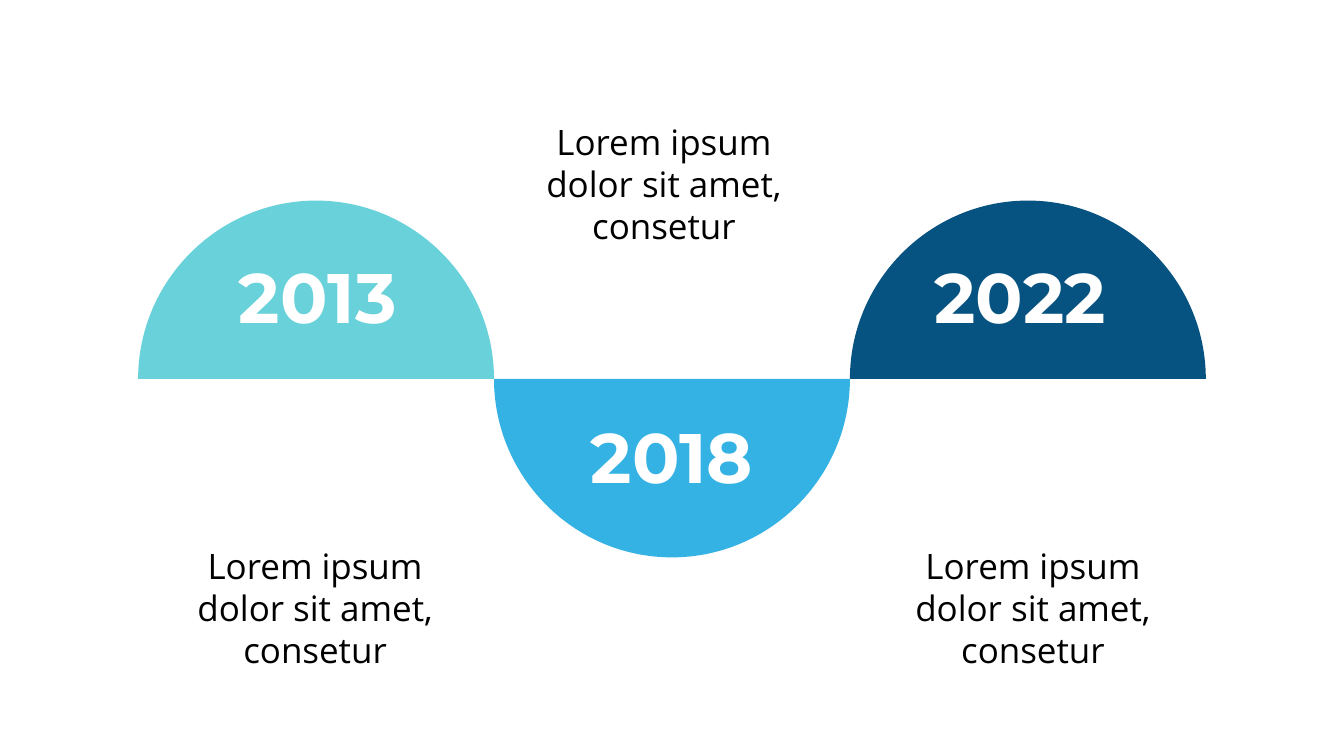
from lxml import etree
from pptx import Presentation
from pptx.dml.color import RGBColor
from pptx.enum.text import MSO_ANCHOR, MSO_AUTO_SIZE, PP_ALIGN
from pptx.oxml.ns import qn
from pptx.util import Inches, Pt

LEFT, CENTER = PP_ALIGN.LEFT, PP_ALIGN.CENTER
TOP = MSO_ANCHOR.TOP
GROW = MSO_AUTO_SIZE.SHAPE_TO_FIT_TEXT

WIDTH, HEIGHT = 3.53, 1.77
WAVE_LEFT, WAVE_MIDDLE = 1.37, 3.76
ROUNDNESS = 0.55
CAPTION = "Lorem ipsum dolor sit amet, consetur"

HALF_CIRCLES = [(-1, "69D1DA"), (1, "34B2E3"), (-1, "065280")]
YEARS = [
    ("2013", (2.37, 2.52, 2.04, 1.04)),
    ("2022", (9.27, 2.52, 2.19, 1.04)),
    ("2018", (5.86, 4.1, 2.08, 1.04)),
]
CAPTION_CORNERS = [(5.3, 1.15), (1.84, 5.35), (8.96, 5.35)]


def color(hex_string):
    """Return the colour for a hex string."""
    return RGBColor.from_string(hex_string)


def bend(segment, points):
    """Turn a straight path segment into a cubic curve through the points."""
    curve = etree.Element(qn("a:cubicBezTo"))
    for x, y in points:
        etree.SubElement(curve, qn("a:pt"), x=str(int(x)), y=str(int(y)))
    segment.getparent().replace(segment, curve)


def add_half_circle(slide, left, direction, fill):
    """Draw a half circle above (-1) or below (1) the middle of the wave."""
    peak = (Inches(left + WIDTH / 2), Inches(WAVE_MIDDLE + direction * HEIGHT))
    start = (Inches(left), Inches(WAVE_MIDDLE))
    end = (Inches(left + WIDTH), Inches(WAVE_MIDDLE))
    builder = slide.shapes.build_freeform(*peak)
    builder.add_line_segments([start, end, peak], close=True)
    shape = builder.convert_to_shape()

    radius = shape.width / 2
    peak_y, base_y = (0, shape.height) if direction < 0 else (shape.height, 0)
    side_y = base_y + (peak_y - base_y) * ROUNDNESS
    reach = radius * ROUNDNESS
    first, _, last = shape.element.findall(".//" + qn("a:lnTo"))[:3]
    bend(first, [(radius - reach, peak_y), (0, side_y), (0, base_y)])
    bend(last, [(shape.width, side_y), (radius + reach, peak_y), (radius, peak_y)])

    shape.shadow.inherit = False
    shape.fill.solid()
    shape.fill.fore_color.rgb = color(fill)
    shape.line.fill.background()


def add_text(slide, text, box, *, font, size, fill, bold=False,
             align=LEFT, wrap=True, insets=(0.1, 0.05)):
    """Add a text box with one formatted paragraph."""
    shape = slide.shapes.add_textbox(*map(Inches, box))
    frame = shape.text_frame
    frame.word_wrap = wrap
    frame.auto_size = GROW
    frame.vertical_anchor = TOP
    frame.margin_left = frame.margin_right = Inches(insets[0])
    frame.margin_top = frame.margin_bottom = Inches(insets[1])
    paragraph = frame.paragraphs[0]
    paragraph.alignment = align
    run = paragraph.add_run()
    run.text = text
    run.font.name = font
    run.font.size = Pt(size)
    run.font.bold = bold
    run.font.color.rgb = color(fill)


def main():
    """Build the timeline slide."""
    presentation = Presentation()
    presentation.slide_width = Inches(13.33)
    presentation.slide_height = Inches(7.5)
    slide = presentation.slides.add_slide(presentation.slide_layouts[6])

    for index, (direction, fill) in enumerate(HALF_CIRCLES):
        add_half_circle(slide, WAVE_LEFT + WIDTH * index, direction, fill)
    for year, box in YEARS:
        add_text(slide, year, box, font="Montserrat", size=50,
                 fill="FFFFFF", bold=True, wrap=False, insets=(0, 0))
    for corner in CAPTION_CORNERS:
        add_text(slide, CAPTION, (*corner, 2.57, 1.36), font="Open Sans",
                 size=25, fill="000000", align=CENTER)

    presentation.save("out.pptx")


if __name__ == "__main__":
    main()
